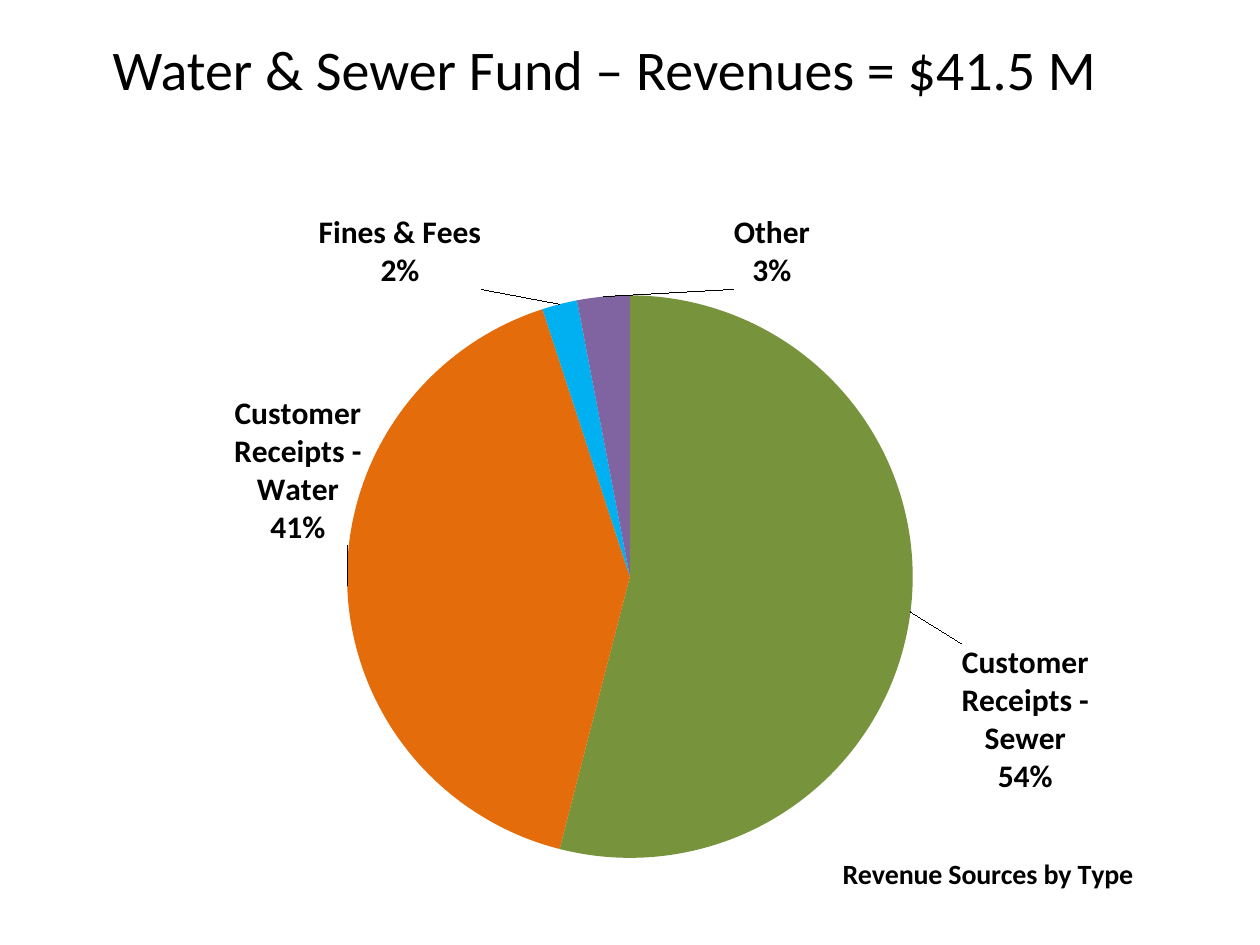
from pptx import Presentation
from pptx.chart.data import CategoryChartData
from pptx.dml.color import RGBColor
from pptx.enum.chart import XL_CHART_TYPE as ChartType, XL_LABEL_POSITION as LabelPos
from pptx.enum.text import MSO_ANCHOR as Anchor, PP_ALIGN as Align
from pptx.oxml import parse_xml
from pptx.oxml.ns import nsdecls
from pptx.util import Inches, Pt

COLORS = {"text": "000000", "sewer": "77933C", "water": "E46C0A",
          "fines": "00B0F0", "other": "8064A2"}

# category, percent, colour, label shift as shares of the chart
REVENUES = [
    ("Customer Receipts - Sewer", 54, "sewer", (0.04, 0.04)),
    ("Customer Receipts - Water", 41, "water", (0.02, -0.15)),
    ("Fines & Fees", 2, "fines", (-0.07, -0.01)),
    ("Other", 3, "other", (0.19, 0)),
]


def layout_xml(**places):
    """Manual chart layout; each place is a c: element name and its value."""
    parts = "".join(f'<c:{name} val="{value}"/>' for name, value in places.items())
    return parse_xml(f'<c:layout {nsdecls("c")}><c:manualLayout>{parts}'
                     "</c:manualLayout></c:layout>")


class Deck:
    font = "Calibri"

    def __init__(self, width, height):
        self.prs = Presentation()
        self.prs.slide_width, self.prs.slide_height = Inches(width), Inches(height)
        self.slide = self.prs.slides.add_slide(self.prs.slide_layouts[6])

    def box(self, left, top, width, height):
        """Turn shares of the slide into lengths."""
        w, h = self.prs.slide_width, self.prs.slide_height
        return int(left * w), int(top * h), int(width * w), int(height * h)

    def style(self, font, size, bold=False):
        font.name, font.size, font.bold = self.font, Pt(size), bold
        font.color.rgb = RGBColor.from_string(COLORS["text"])

    def heading(self, words, place, size):
        frame = self.slide.shapes.add_textbox(*self.box(*place)).text_frame
        frame.word_wrap = True
        frame.vertical_anchor = Anchor.MIDDLE
        line = frame.paragraphs[0]
        line.alignment = Align.CENTER
        run = line.add_run()
        run.text = words
        self.style(run.font, size)

    def pie(self, caption, rows, place):
        data = CategoryChartData()
        data.categories = [row[0] for row in rows]
        data.add_series("Series 1", [row[1] for row in rows])
        chart = self.slide.shapes.add_chart(ChartType.PIE, *self.box(*place), data).chart
        chart.has_legend = False
        self.style(chart.font, 18)
        self.caption(chart, caption)
        plot = chart.plots[0]
        plot.vary_by_categories = True
        chart._chartSpace.chart.plotArea.insert(0, layout_xml(
            layoutTarget="inner", xMode="edge", yMode="edge",
            x=0.24, y=0.22, w=0.52, h=0.73))
        for point, row in zip(plot.series[0].points, rows):
            fill = point.format.fill
            fill.solid()
            fill.fore_color.rgb = RGBColor.from_string(COLORS[row[2]])
        self.labels(plot.series[0], [row[3] for row in rows])

    def caption(self, chart, words):
        chart.has_title = True
        title = chart.chart_title
        title.include_in_layout = True
        run = title.text_frame.paragraphs[0].add_run()
        run.text = words
        self.style(run.font, 16, bold=True)
        element = title._element
        for old in element.findall("{*}layout"):
            element.remove(old)
        element.find("{*}tx").addnext(
            layout_xml(xMode="edge", yMode="edge", x=0.69, y=0.94))

    def labels(self, series, shifts):
        labels = series.data_labels
        self.style(labels.font, 18, bold=True)
        labels.show_value = False
        labels.show_category_name = labels.show_percentage = True
        labels.position = LabelPos.OUTSIDE_END
        shows = "".join(
            f'<c:show{name} val="{int(name in ("CatName", "Percent"))}"/>'
            for name in ("LegendKey", "Val", "CatName", "SerName", "Percent", "BubbleSize"))
        for index, (x, y) in enumerate(shifts):
            label = parse_xml(
                f'<c:dLbl {nsdecls("c")}><c:idx val="{index}"/><c:dLblPos val="outEnd"/>'
                f"{shows}<c:separator>\n</c:separator></c:dLbl>")
            label.insert(1, layout_xml(x=x, y=y))
            labels._element.insert(index, label)
        bubble = labels._element.find("{*}showBubbleSize")
        separator = parse_xml(f'<c:separator {nsdecls("c")}>\n</c:separator>')
        bubble.addnext(separator)
        for old in labels._element.findall("{*}showLeaderLines"):
            labels._element.remove(old)
        separator.addnext(parse_xml(f'<c:showLeaderLines {nsdecls("c")} val="1"/>'))

    def save(self):
        self.prs.save("out.pptx")


def main():
    deck = Deck(10, 7.5)
    deck.heading("Water & Sewer Fund – Revenues = $41.5 M", (0.05, 1 / 45, 0.86, 0.1), 32)
    deck.pie("Revenue Sources by Type", REVENUES, (1 / 15, 2 / 15, 13 / 15, 0.82))
    deck.save()


if __name__ == "__main__":
    main()
